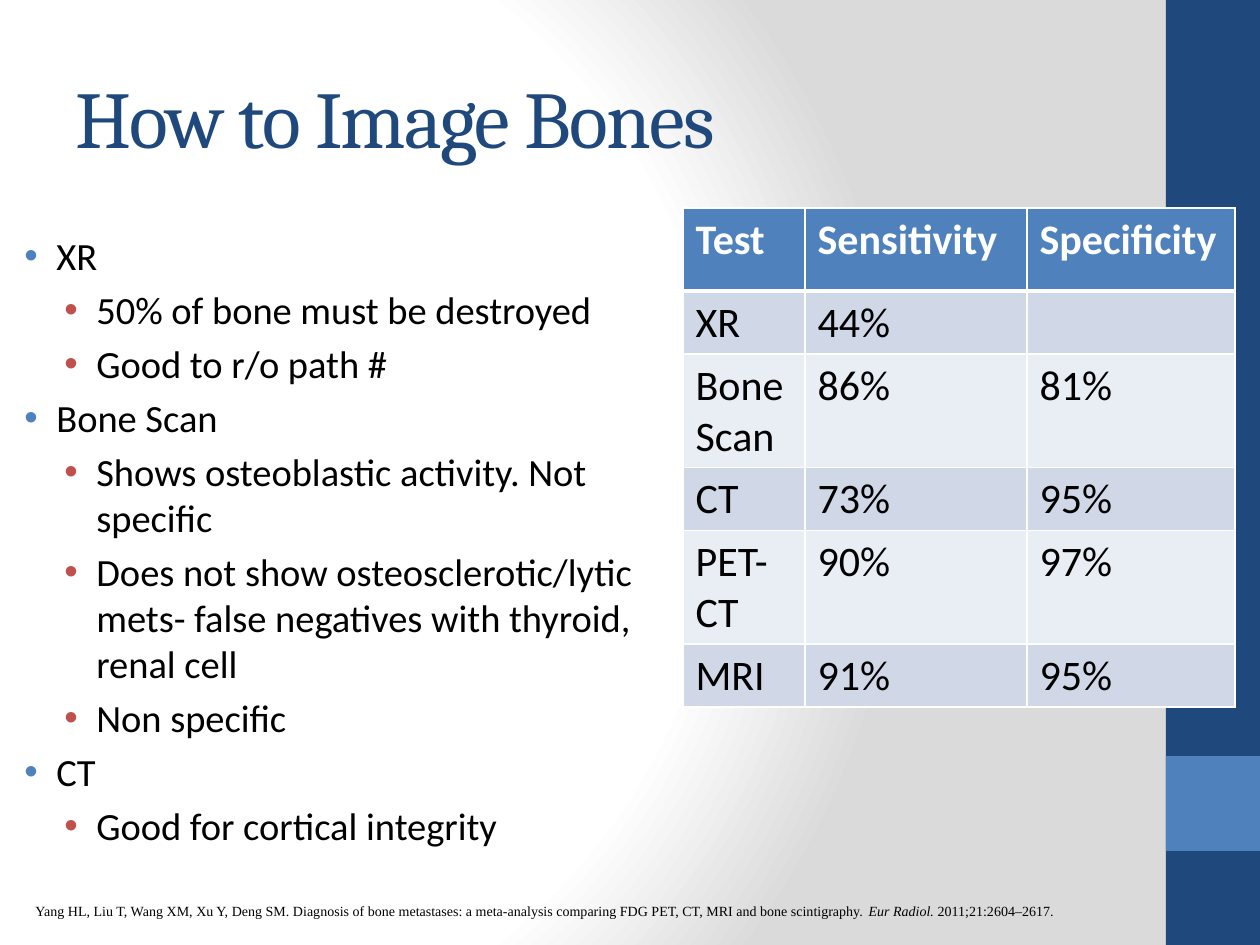
from dataclasses import dataclass
from lxml import etree
from pptx import Presentation
from pptx.dml.color import RGBColor
from pptx.enum.shapes import MSO_SHAPE as Shape
from pptx.enum.text import MSO_ANCHOR as Anchor, PP_ALIGN as Align
from pptx.oxml import parse_xml
from pptx.oxml.ns import nsdecls, qn
from pptx.util import Emu, Pt

PX = 914400 // 126


@dataclass(frozen=True)
class Theme:
    navy: str = "1F497D"
    blue: str = "4F81BD"
    red: str = "C0504D"
    black: str = "000000"
    white: str = "FFFFFF"
    gray: str = "DADADA"
    dark_band: str = "D0D8E8"
    light_band: str = "E9EDF4"
    heading_font: str = "Cambria"
    body_font: str = "Calibri"
    citation_font: str = "Times New Roman"
    title_size: int = 46
    table_size: int = 24
    body_size: int = 22
    citation_size: int = 8


theme = Theme()


def box(left, top, width, height):
    return [Emu(value * PX) for value in (left, top, width, height)]


def add_text(paragraph, text, *, size, font=theme.body_font, color=theme.black,
             bold=False, italic=False):
    run = paragraph.add_run()
    run.text = text
    run.font.size = Pt(size)
    run.font.name = font
    run.font.bold = bold
    run.font.italic = italic
    run.font.color.rgb = RGBColor.from_string(color)
    return run


presentation = Presentation()
presentation.slide_width, presentation.slide_height = Emu(1260 * PX), Emu(945 * PX)
slide = presentation.slides.add_slide(presentation.slide_layouts[5])

# Background: white spreading from the left into gray
slide.background.fill.solid()
background = slide.element.find(".//" + qn("p:bgPr"))
stops = "".join(
    f'<a:gs pos="{position * 1000}"><a:srgbClr val="{color}"/></a:gs>'
    for position, color in ((0, theme.white), (75, theme.white), (100, theme.gray)))
background.replace(background[0], parse_xml(
    f'<a:gradFill {nsdecls("a")} rotWithShape="1"><a:gsLst>{stops}</a:gsLst>'
    '<a:path path="circle"><a:fillToRect l="20000" t="50000" r="100000" b="50000"/>'
    '</a:path></a:gradFill>'))

# Side band
for top, height, color in ((0, 945, theme.navy), (756, 95, theme.blue)):
    band = slide.shapes.add_shape(Shape.RECTANGLE, *box(1166, top, 94, height))
    band.shadow.inherit = False
    band.fill.solid()
    band.fill.fore_color.rgb = RGBColor.from_string(color)
    band.line.fill.background()

# Title
title = slide.shapes.title
title.left, title.top, title.width, title.height = box(63, 38, 1050, 157)
title.text_frame.vertical_anchor = Anchor.MIDDLE
paragraph = title.text_frame.paragraphs[0]
paragraph.alignment = Align.LEFT
title_run = add_text(paragraph, "How to Image Bones", size=theme.title_size,
                     font=theme.heading_font, color=theme.navy)
title_run.font._element.set("spc", "-100")

# Bulleted notes: level and text
notes = (
    (0, "XR"),
    (1, "50% of bone must be destroyed"),
    (1, "Good to r/o path #"),
    (0, "Bone Scan"),
    (1, "Shows osteoblastic activity. Not specific"),
    (1, "Does not show osteosclerotic/lytic mets- false negatives with thyroid, renal cell"),
    (1, "Non specific"),
    (0, "CT"),
    (1, "Good for cortical integrity"),
)
bullet_styles = ((48, theme.blue), (88, theme.red))
notes_frame = slide.shapes.add_textbox(*box(-4, 226, 703, 653)).text_frame
notes_frame.word_wrap = True
for index, (level, text) in enumerate(notes):
    paragraph = notes_frame.add_paragraph() if index else notes_frame.paragraphs[0]
    margin, color = bullet_styles[level]
    paragraph.level = level
    if index:
        paragraph.space_before = Pt(theme.body_size * 0.2)
    properties = paragraph._p.get_or_add_pPr()
    properties.set("marL", str(margin * PX))
    properties.set("indent", str(-32 * PX))
    bullet_color = etree.SubElement(properties, qn("a:buClr"))
    etree.SubElement(bullet_color, qn("a:srgbClr"), val=color)
    etree.SubElement(properties, qn("a:buFont"), typeface="Arial")
    etree.SubElement(properties, qn("a:buChar"), char="•")
    add_text(paragraph, text, size=theme.body_size)

# Citation
citation_frame = slide.shapes.add_textbox(*box(23, 896, 1095, 30)).text_frame
citation_frame.word_wrap = True
for text, italic in (
    ("Yang HL, Liu T, Wang XM, Xu Y, Deng SM. Diagnosis of bone metastases: "
     "a meta-analysis comparing FDG PET, CT, MRI and bone scintigraphy. ", False),
    ("Eur Radiol. ", True),
    ("2011;21:2604–2617.", False),
):
    add_text(citation_frame.paragraphs[0], text, size=theme.citation_size,
             font=theme.citation_font, italic=italic)

# Test accuracy table
accuracy = (
    ("Test", "Sensitivity", "Specificity"),
    ("XR", "44%", ""),
    ("Bone Scan", "86%", "81%"),
    ("CT", "73%", "95%"),
    ("PET-CT", "90%", "97%"),
    ("MRI", "91%", "95%"),
)
column_widths = (122, 222, 208)
row_heights = (83, 57, 100, 57, 100, 57)
table = slide.shapes.add_table(
    len(accuracy), len(column_widths),
    *box(683, 208, sum(column_widths), sum(row_heights))).table
for column, width in zip(table.columns, column_widths):
    column.width = Emu(width * PX)
for row, height in zip(table.rows, row_heights):
    row.height = Emu(height * PX)
for row_index, values in enumerate(accuracy):
    header = row_index == 0
    band_color = theme.dark_band if row_index % 2 else theme.light_band
    edges = {"lnL": 1, "lnR": 1, "lnT": 3 if row_index == 1 else 1,
             "lnB": 3 if header else 1}
    for column_index, text in enumerate(values):
        cell = table.cell(row_index, column_index)
        cell.fill.solid()
        cell.fill.fore_color.rgb = RGBColor.from_string(theme.blue if header else band_color)
        properties = cell._tc.get_or_add_tcPr()
        for position, (edge, weight) in enumerate(edges.items()):
            properties.insert(position, parse_xml(
                f'<a:{edge} {nsdecls("a")} w="{Pt(weight)}"><a:solidFill>'
                f'<a:srgbClr val="{theme.white}"/></a:solidFill></a:{edge}>'))
        if text:
            add_text(cell.text_frame.paragraphs[0], text, size=theme.table_size,
                     color=theme.white if header else theme.black, bold=header)

presentation.save("out.pptx")
